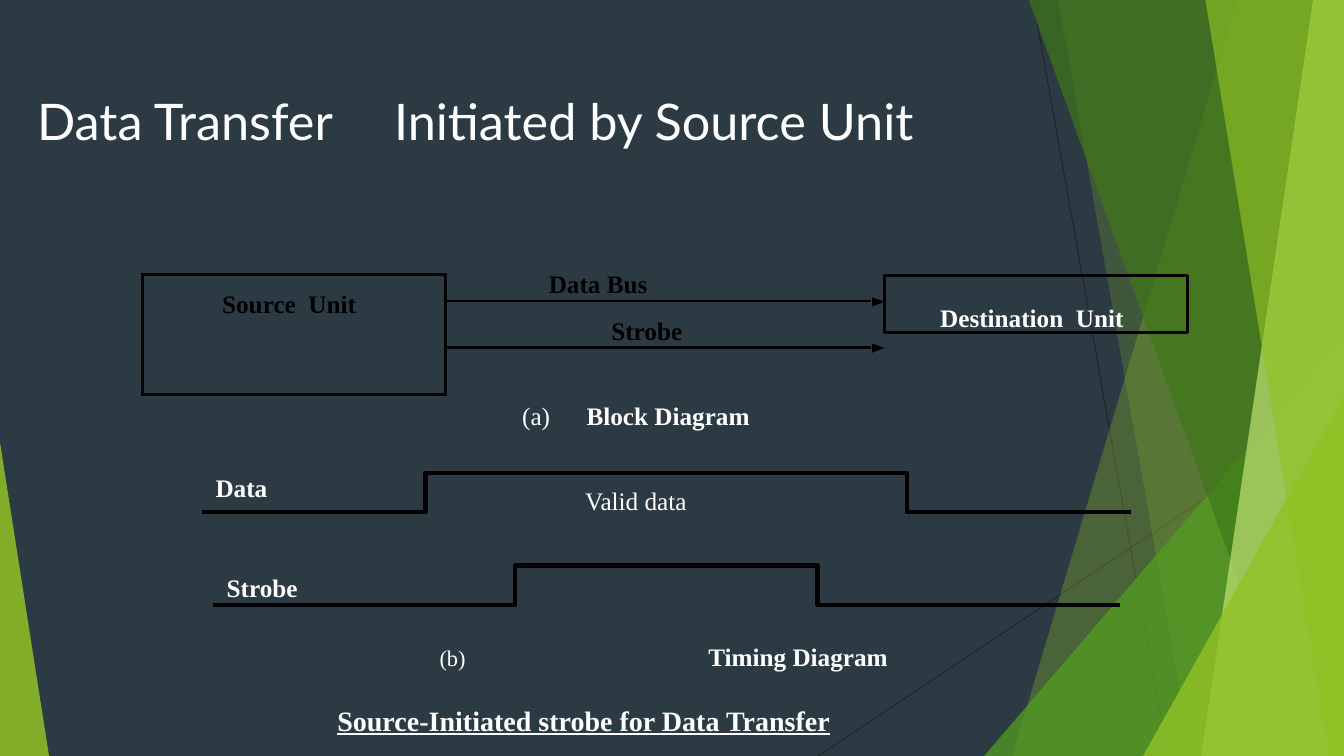
from pptx import Presentation
from pptx.dml.color import RGBColor
from pptx.enum.shapes import MSO_CONNECTOR, MSO_SHAPE
from pptx.enum.text import PP_ALIGN
from pptx.oxml.ns import qn
from pptx.util import Pt
from lxml.etree import SubElement

WIDTH, HEIGHT = 960, 540
BLACK, WHITE = "000000", "FFFFFF"
SERIF = "Times New Roman"
NO_STYLE = "{2D5ABB26-0587-4C30-8999-92F81FD0307C}"


def rgb(color):
    return RGBColor.from_string(color)


def add_run(paragraph, text, size=18, color=WHITE, bold=False, underline=None, font=SERIF):
    run = paragraph.add_run()
    run.text = text
    run.font.name = font
    run.font.size = Pt(size)
    run.font.bold = bold
    run.font.underline = underline
    run.font.color.rgb = rgb(color)


def add_tab(paragraph, position):
    tabs = SubElement(paragraph._p.get_or_add_pPr(), qn("a:tabLst"))
    SubElement(tabs, qn("a:tab"), pos=str(Pt(position)), algn="l")


def set_indent(paragraph, left):
    paragraph._p.get_or_add_pPr().set("marL", str(Pt(left)))


def set_margins(target, left=0, top=0, right=0, bottom=0):
    target.margin_left, target.margin_top = Pt(left), Pt(top)
    target.margin_right, target.margin_bottom = Pt(right), Pt(bottom)


def add_text_box(slide, left, top, width, height):
    frame = slide.shapes.add_textbox(Pt(left), Pt(top), Pt(width), Pt(height)).text_frame
    frame.word_wrap = True
    set_margins(frame, left=1, top=1.5)
    return frame


def add_outline(slide, points, fill=None, alpha=100, line_width=None):
    start, *others = [(Pt(x), Pt(y)) for x, y in points]
    builder = slide.shapes.build_freeform(*start, scale=1.0)
    builder.add_line_segments(others, close=fill is not None)
    shape = builder.convert_to_shape()
    shape.shadow.inherit = False
    if fill:
        shape.fill.solid()
        shape.fill.fore_color.rgb = rgb(fill)
        color = shape._element.spPr.find(qn("a:solidFill"))[0]
        SubElement(color, qn("a:alpha"), val=str(alpha * 1000))
        shape.line.fill.background()
    else:
        shape.fill.background()
        shape.line.color.rgb = rgb(BLACK)
        shape.line.width = Pt(line_width)


def add_facets(slide, left, top, width, height):
    right, bottom = left + width, top + height
    for start, end in (((738, 0), (834, height)), ((width, 290), (584.5, height))):
        line = slide.shapes.add_connector(
            MSO_CONNECTOR.STRAIGHT, Pt(left + start[0]), Pt(top + start[1]),
            Pt(left + end[0]), Pt(top + end[1]))
        line.line.color.rgb = rgb("252525")
        line.line.width = Pt(0.72)
        SubElement(line._element.spPr, qn("a:effectLst"))

    facets = [
        (884, 0, 723, "90C225", 30),
        (756, 0, 851, "90C225", 20),
        (width, 240, 703, "539F20", 72),
        (735, 0, 929.5, "3E7818", 70),
        (938, 0, 858, "C0E374", 70),
        (861, 0, 949, "90C225", 65),
        (width, 283, 816.5, "90C225", 80),
    ]
    for upper_x, upper_y, lower_x, color, alpha in facets:
        points = [(left + upper_x, top + upper_y), (left + lower_x, bottom), (right, bottom)]
        if upper_x < width:
            points.append((right, top))
        add_outline(slide, points, color, alpha)
    add_outline(slide, [(left, top + 316), (left, bottom), (left + 35, bottom)], "90C225", 85)


def add_title(slide, left, top, width, height):
    paragraph = add_text_box(slide, left, top, width, height).paragraphs[0]
    set_indent(paragraph, 1)
    add_tab(paragraph, 255)
    add_run(paragraph, "Data Transfer\tInitiated by Source Unit", 36, font="Lato")


def format_cell(cell, sides):
    properties = cell._tc.get_or_add_tcPr()
    for side in sides:
        border = SubElement(properties, qn(f"a:ln{side}"), w=str(Pt(2.25)))
        fill = SubElement(border, qn("a:solidFill"))
        SubElement(fill, qn("a:srgbClr"), val=BLACK)
    cell.fill.background()
    set_margins(cell)


def add_source_table(slide, left, top, columns, rows):
    table = slide.shapes.add_table(
        len(rows), len(columns), Pt(left), Pt(top), Pt(sum(columns)), Pt(sum(rows))).table
    table.first_row = table.horz_banding = False
    table._tbl.tblPr.find(qn("a:tableStyleId")).text = NO_STYLE
    for column, width in zip(table.columns, columns):
        column.width = Pt(width)
    for row, height, bus_sides in zip(table.rows, rows, ("LB", "LTB", "LT")):
        row.height = Pt(height)
        format_cell(row.cells[0], "LRTB")
        format_cell(row.cells[1], bus_sides)
    source, data_bus, strobe = table.cell(0, 0), table.cell(0, 1), table.cell(1, 1)
    source.merge(table.cell(len(rows) - 1, 0))
    set_margins(source, top=1.5, right=7)
    set_margins(data_bus, left=74)
    set_margins(strobe, top=13, right=16)
    for cell, text, spacing, alignment in (
            (source, "Source  Unit", 1.52, PP_ALIGN.CENTER),
            (data_bus, "Data Bus", Pt(17.8), PP_ALIGN.LEFT),
            (strobe, "Strobe", Pt(18.9), PP_ALIGN.CENTER)):
        paragraph = cell.text_frame.paragraphs[0]
        paragraph.alignment = alignment
        paragraph.line_spacing = spacing
        add_run(paragraph, text, color=BLACK, bold=True)


def add_destination(slide, left, top, width, height):
    box = slide.shapes.add_shape(MSO_SHAPE.RECTANGLE, Pt(left), Pt(top), Pt(width), Pt(height))
    box.shadow.inherit = False
    box.fill.background()
    box.line.color.rgb = rgb(BLACK)
    box.line.width = Pt(2.25)
    set_margins(box.text_frame, left=39.6, top=18.6)
    paragraph = box.text_frame.paragraphs[0]
    paragraph.alignment = PP_ALIGN.LEFT
    add_run(paragraph, "Destination  Unit", bold=True)


def add_block_diagram(slide, left, top):
    columns, rows = (216, 304), (19, 33, 34)
    add_source_table(slide, left, top, columns, rows)
    destination_left = left + 530
    for line_y in (top + rows[0], top + rows[0] + rows[1]):
        add_outline(slide, [(destination_left - 9, line_y - 2.6), (destination_left - 9, line_y + 3.9),
                            (destination_left, line_y + 0.6)], BLACK)
    add_destination(slide, destination_left, top + 0.7, 216, 41)
    caption = add_text_box(slide, left + 269, top + 88.5, 218, 24).paragraphs[0]
    set_indent(caption, 1)
    add_tab(caption, 46)
    add_run(caption, "(a)\t")
    add_run(caption, "Block Diagram", bold=True)


def add_pulse(slide, left, top, width, height, edge):
    rise, fall, base = left + edge, left + width - edge, top + height
    add_outline(slide, [(left, base), (rise, base), (rise, top), (fall, top),
                        (fall, base), (left + width, base)], line_width=3)


def add_timing_diagram(slide, left, top):
    add_pulse(slide, left, top, 664, 28, 160)
    add_pulse(slide, left + 8, top + 66, 648, 28, 216)
    for text, x, y, width, bold in (("Valid data", 272, 7.5, 102, False),
                                    ("Data", 8, -2, 52, True)):
        paragraph = add_text_box(slide, left + x, top + y, width, 24).paragraphs[0]
        set_indent(paragraph, 1)
        add_run(paragraph, text, bold=bold)

    frame = add_text_box(slide, left + 16, top + 69, 582, 117)
    strobe = frame.paragraphs[0]
    set_indent(strobe, 1)
    add_run(strobe, "Strobe", bold=True)
    caption = frame.add_paragraph()
    set_indent(caption, 153)
    caption.space_before = Pt(28)
    add_tab(caption, 192)
    add_run(caption, "(b)\t", 16)
    add_run(caption, "Timing Diagram", bold=True)
    summary = frame.add_paragraph()
    set_indent(summary, 80)
    summary.space_before = Pt(22.5)
    add_run(summary, "Source-Initiated strobe for Data Transfer", 20, bold=True, underline=True)


def main():
    presentation = Presentation()
    presentation.slide_width, presentation.slide_height = Pt(WIDTH), Pt(HEIGHT)
    slide = presentation.slides.add_slide(presentation.slide_layouts[6])
    slide.background.fill.solid()
    slide.background.fill.fore_color.rgb = rgb("2C3B43")
    add_facets(slide, 0, 0, WIDTH, HEIGHT)
    add_block_diagram(slide, 102, 196)
    add_timing_diagram(slide, 144, 338)
    add_title(slide, 24.5, 62.6, 907, 45)
    presentation.save("out.pptx")


if __name__ == "__main__":
    main()
